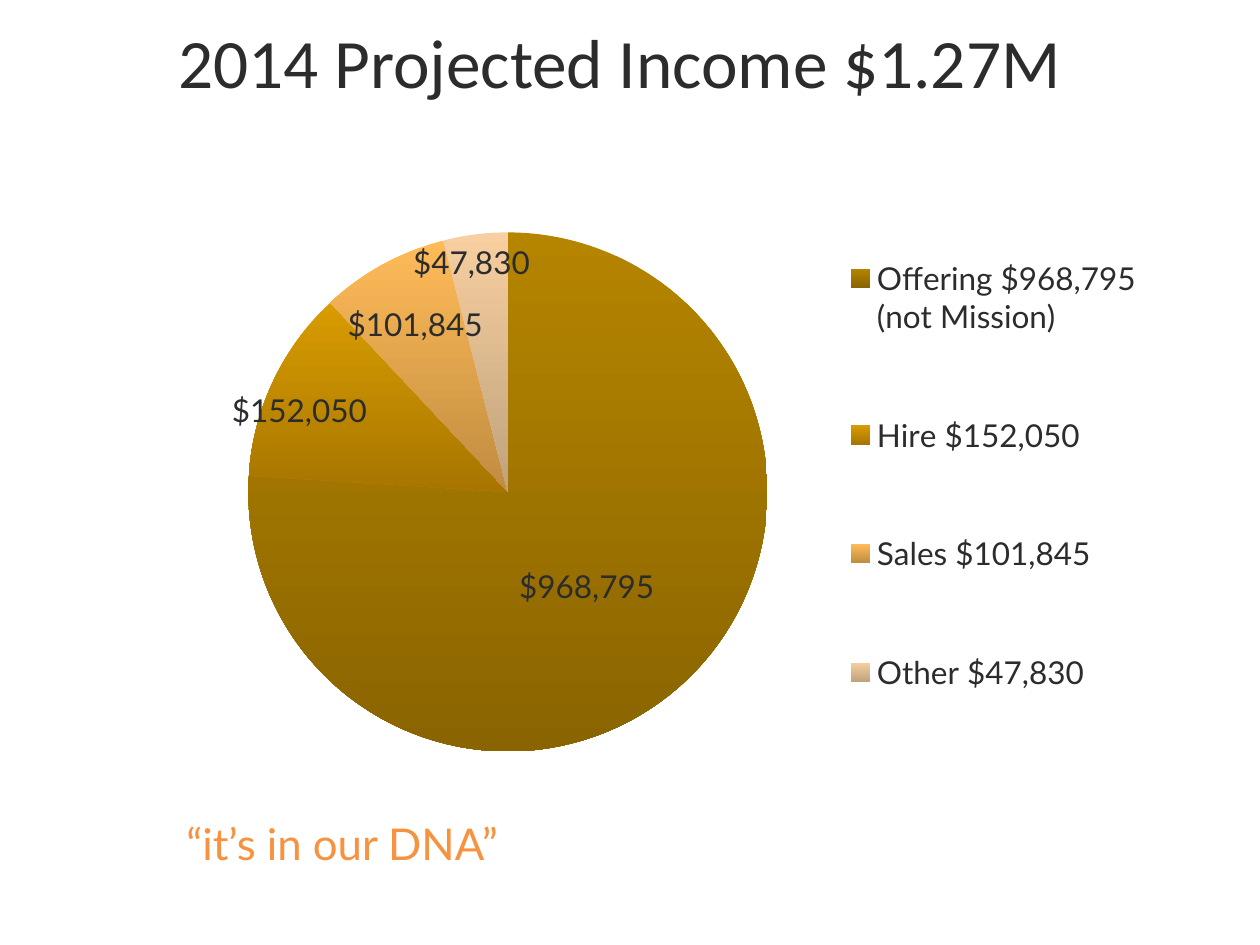
from dataclasses import dataclass

from lxml import etree
from pptx import Presentation
from pptx import util as u
from pptx.chart.data import CategoryChartData
from pptx.dml.color import RGBColor
from pptx.enum import chart as ch
from pptx.enum import text
from pptx.oxml.ns import qn

COLOURS = {"ink": "2C2C2D", "orange": "F69240"}


@dataclass
class TextBlock:
    words: str
    box: tuple[float, float, float, float]
    size: float
    font: str
    colour: str
    anchor: text.MSO_ANCHOR


@dataclass
class IncomeSlice:
    category: str
    share: int
    label: str
    top_colour: str
    bottom_colour: str
    label_shift: tuple[float, float]  # fraction of the chart size


TEXTS = [
    TextBlock("“it’s in our DNA”", (1.22, 6.43, 2.99, 1.07), 25, "Lato",
              "orange", text.MSO_ANCHOR.TOP),
    TextBlock("2014 Projected Income $1.27M", (0.67, 0.13, 8.5, 0.71), 39.6, "Calibri",
              "ink", text.MSO_ANCHOR.MIDDLE),
]

SLICES = [
    IncomeSlice("Offering $968,795 (not Mission)", 76, "$968,795", "B58500", "8A6400", (-0.01, 0)),
    IncomeSlice("Hire $152,050", 12, "$152,050", "D89C00", "A87600", (-0.09, -0.04)),
    IncomeSlice("Sales $101,845", 8, "$101,845", "FFBB58", "C08C40", (-0.03, -0.08)),
    IncomeSlice("Other $47,830", 4, "$47,830", "F7CFA0", "C0A27C", (-0.02, -0.15)),
]


def style_font(font, size: float, name: str, colour: str) -> None:
    font.size = u.Pt(size)
    font.name = name
    font.color.rgb = RGBColor.from_string(COLOURS[colour])


def add_text(slide, block: TextBlock) -> None:
    shape = slide.shapes.add_textbox(*map(u.Inches, block.box))
    frame = shape.text_frame
    frame.word_wrap = True
    frame.vertical_anchor = block.anchor
    paragraph = frame.paragraphs[0]
    paragraph.alignment = text.PP_ALIGN.CENTER
    run = paragraph.add_run()
    run.text = block.words
    style_font(run.font, block.size, block.font, block.colour)


def set_layout(parent, index: int, **settings) -> None:
    """Give a chart part a manual layout, placed at the index its schema asks for."""
    for old in parent.findall(qn("c:layout")):
        parent.remove(old)
    layout = etree.Element(qn("c:layout"))
    manual = etree.SubElement(layout, qn("c:manualLayout"))
    for tag, value in settings.items():
        etree.SubElement(manual, qn(f"c:{tag}")).set("val", str(value))
    parent.insert(index, layout)


def format_slice(point, income: IncomeSlice) -> None:
    fill = point.format.fill
    fill.gradient()
    fill.gradient_angle = 270
    for stop, colour in zip(fill.gradient_stops, (income.top_colour, income.bottom_colour)):
        stop.color.rgb = RGBColor.from_string(colour)
    point.format.line.fill.background()

    label = point.data_label
    run = label.text_frame.paragraphs[0].add_run()
    run.text = income.label
    style_font(run.font, 18, "Lato", "ink")
    label.position = ch.XL_LABEL_POSITION.CENTER


def add_income_chart(slide, slices: list[IncomeSlice]) -> None:
    data = CategoryChartData()
    data.categories = [income.category for income in slices]
    data.add_series("Series 1", [income.share for income in slices])
    box = map(u.Inches, (1.14, 1.15, 8.03, 5.35))
    chart = slide.shapes.add_chart(ch.XL_CHART_TYPE.PIE, *box, data).chart
    chart.has_title = False
    style_font(chart.font, 18, "Lato", "ink")
    plot = chart.plots[0]
    plot.vary_by_categories = True

    # Slices and their labels
    series = plot.series[0]
    for index, income in enumerate(slices):
        format_slice(series.points[index], income)
    labels = chart.element.iter(qn("c:dLbl"))
    for label, income in zip(list(labels), slices):
        x, y = income.label_shift
        set_layout(label, 1, x=x, y=y)

    # Plot area and legend
    set_layout(chart.element.find(f".//{qn('c:plotArea')}"), 0, layoutTarget="inner",
               xMode="edge", yMode="edge", x=0.09, y=0.13, w=0.54, h=0.77)
    chart.has_legend = True
    chart.legend.position = ch.XL_LEGEND_POSITION.RIGHT
    chart.legend.include_in_layout = False
    set_layout(chart.element.find(f".//{qn('c:legend')}"), 1,
               xMode="edge", yMode="edge", x=0.69, y=0.05, w=0.3, h=0.88)


def main() -> None:
    presentation = Presentation()
    presentation.slide_width = u.Inches(10)
    presentation.slide_height = u.Inches(7.5)
    slide = presentation.slides.add_slide(presentation.slide_layouts[6])
    for block in TEXTS:
        add_text(slide, block)
    add_income_chart(slide, SLICES)
    presentation.save("out.pptx")


if __name__ == "__main__":
    main()
